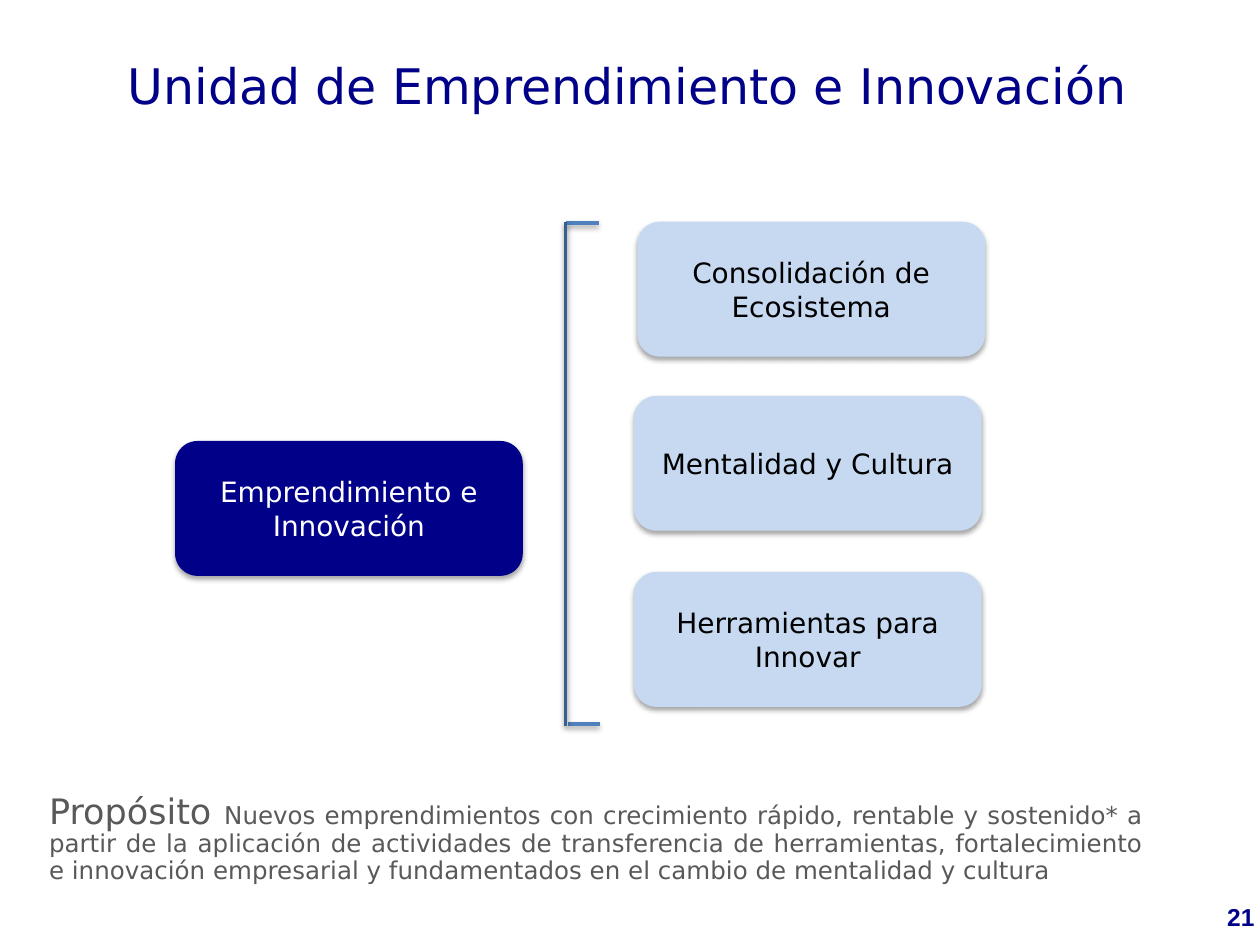
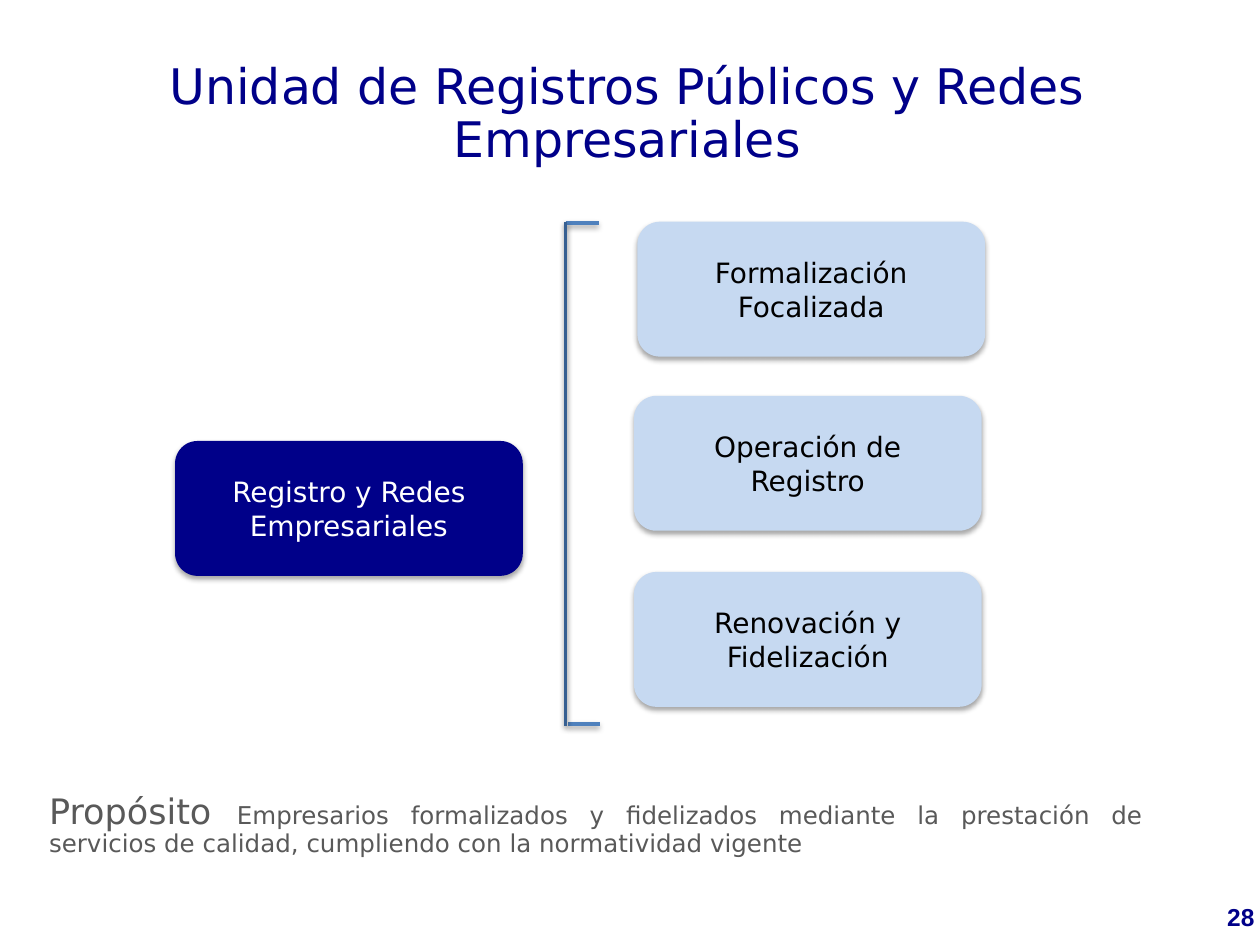
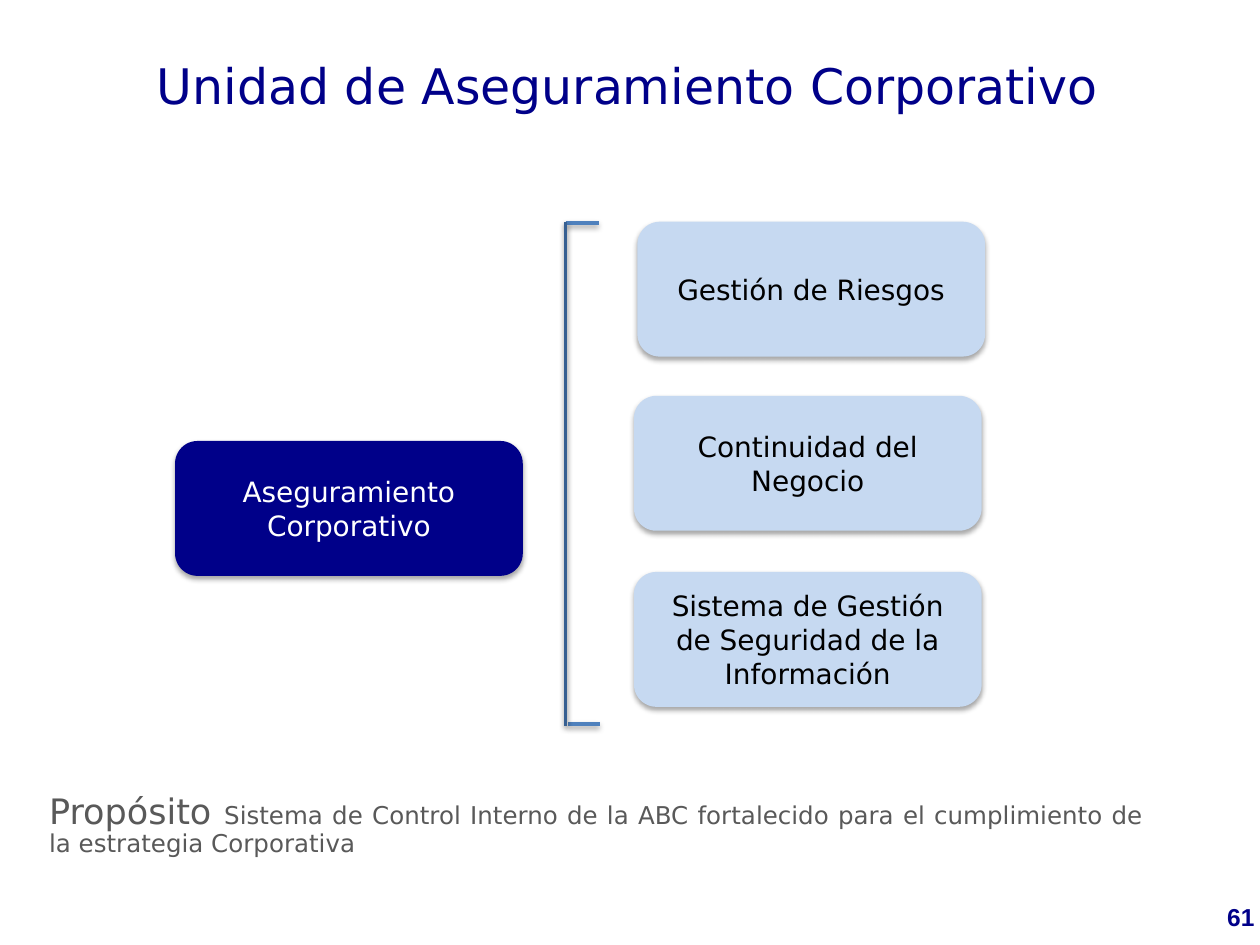
from dataclasses import dataclass
from typing import Optional

import lxml.etree
import pptx
import pptx.dml.color
import pptx.enum.shapes
import pptx.enum.text
import pptx.oxml.ns
import pptx.shapes.autoshape
import pptx.shapes.connector
import pptx.slide
import pptx.text.text
import pptx.util
from pptx.util import Cm

Align = pptx.enum.text.PP_ALIGN


@dataclass(frozen=True)
class Theme:
    navy: str = "000089"
    pale_blue: str = "C6D9F1"
    arm_blue: str = "4F81BD"
    spine_blue: str = "376092"
    gray: str = "595959"
    white: str = "FFFFFF"
    black: str = "000000"
    body_font: str = "DejaVu Sans"
    number_font: str = "Arial"
    title_size: int = 28
    label_size: int = 20
    box_size: int = 16
    text_size: int = 14
    line_width: int = 2
    tight_spacing: float = 0.9


THEME = Theme()


@dataclass(frozen=True)
class Area:
    left: float
    top: float
    width: float
    height: float

    def lengths(self) -> tuple[Cm, Cm, Cm, Cm]:
        return Cm(self.left), Cm(self.top), Cm(self.width), Cm(self.height)


@dataclass(frozen=True)
class Stroke:
    x1: float
    y1: float
    x2: float
    y2: float
    color: str


@dataclass(frozen=True)
class Shadow:
    distance: float
    opacity: int
    blur: float = 3.1


@dataclass(frozen=True)
class Unit:
    title: str
    name: str
    programs: tuple[str, str, str]
    purpose: str
    number: int
    title_lines: int = 1
    purpose_height: float = 2.11


# Layout, in centimetres
BOX_WIDTH, BOX_HEIGHT = 7.01, 2.72
UNIT_AREA = Area(3.53, 8.89, BOX_WIDTH, BOX_HEIGHT)
PROGRAM_AREAS = [
    Area(left, top, BOX_WIDTH, BOX_HEIGHT)
    for left, top in ((12.85, 4.47), (12.78, 7.98), (12.78, 11.53))
]
BRACKET = (
    Stroke(11.4, 4.5, 12.07, 4.5, THEME.arm_blue),
    Stroke(12.09, 14.6, 11.46, 14.6, THEME.arm_blue),
    Stroke(11.4, 4.47, 11.4, 14.63, THEME.spine_blue),
)
NUMBER_AREA = Area(24.23, 18.06, 1.57, 0.86)
BOX_SHADOW = Shadow(distance=1.8, opacity=35)
LINE_SHADOW = Shadow(distance=1.6, opacity=38)

UNITS = (
    Unit(
        "Unidad de Emprendimiento e Innovación",
        "Emprendimiento e Innovación",
        ("Consolidación de Ecosistema", "Mentalidad y Cultura", "Herramientas para Innovar"),
        "Nuevos emprendimientos con crecimiento rápido, rentable y sostenido* a partir de la "
        "aplicación de actividades de transferencia de herramientas, fortalecimiento e innovación "
        "empresarial y fundamentados en el cambio de mentalidad y cultura",
        21,
    ),
    Unit(
        "Unidad de Registros Públicos y Redes Empresariales",
        "Registro y Redes Empresariales",
        ("Formalización Focalizada", "Operación de Registro", "Renovación y Fidelización"),
        "Empresarios formalizados y fidelizados mediante la prestación de servicios de calidad, "
        "cumpliendo con la normatividad vigente",
        28,
        title_lines=2,
    ),
    Unit(
        "Unidad de Aseguramiento Corporativo",
        "Aseguramiento Corporativo",
        (
            "Gestión de Riesgos",
            "Continuidad del Negocio",
            "Sistema de Gestión de Seguridad de la Información",
        ),
        "Sistema de Control Interno de la ABC fortalecido para el cumplimiento de la "
        "estrategia Corporativa",
        61,
        purpose_height=1.57,
    ),
)


def rgb(color: str) -> pptx.dml.color.RGBColor:
    return pptx.dml.color.RGBColor.from_string(color)


def set_font(
    font: pptx.text.text.Font,
    size: int,
    color: str,
    name: str = THEME.body_font,
    bold: bool = False,
) -> None:
    font.name = name
    font.size = pptx.util.Pt(size)
    font.bold = bold
    font.color.rgb = rgb(color)


def add_shadow(
    shape: pptx.shapes.autoshape.Shape | pptx.shapes.connector.Connector, shadow: Shadow
) -> None:
    """Cast a soft black shadow straight down; fill and line must be set before."""
    qn = pptx.oxml.ns.qn
    effects = lxml.etree.SubElement(shape.element.spPr, qn("a:effectLst"))
    outer = lxml.etree.SubElement(
        effects,
        qn("a:outerShdw"),
        blurRad=str(pptx.util.Pt(shadow.blur)),
        dist=str(pptx.util.Pt(shadow.distance)),
        dir="5400000",
        rotWithShape="0",
    )
    color = lxml.etree.SubElement(outer, qn("a:srgbClr"), val=THEME.black)
    lxml.etree.SubElement(color, qn("a:alpha"), val=str(shadow.opacity * 1000))


def add_text(
    slide: pptx.slide.Slide,
    area: Area,
    text: str,
    alignment: Align,
    line_spacing: Optional[float] = None,
) -> pptx.text.text._Paragraph:
    frame = slide.shapes.add_textbox(*area.lengths()).text_frame
    frame.word_wrap = True
    frame.auto_size = pptx.enum.text.MSO_AUTO_SIZE.SHAPE_TO_FIT_TEXT
    paragraph = frame.paragraphs[0]
    paragraph.alignment = alignment
    paragraph.line_spacing = line_spacing
    paragraph.add_run().text = text
    return paragraph


def add_box(
    slide: pptx.slide.Slide, area: Area, text: str, fill: str, text_color: str
) -> None:
    shape = slide.shapes.add_shape(
        pptx.enum.shapes.MSO_SHAPE.ROUNDED_RECTANGLE, *area.lengths()
    )
    shape.fill.solid()
    shape.fill.fore_color.rgb = rgb(fill)
    shape.line.fill.background()
    add_shadow(shape, BOX_SHADOW)
    frame = shape.text_frame
    frame.word_wrap = True
    frame.vertical_anchor = pptx.enum.text.MSO_ANCHOR.MIDDLE
    paragraph = frame.paragraphs[0]
    paragraph.text = text
    paragraph.alignment = Align.CENTER
    set_font(paragraph.font, THEME.box_size, text_color)


def add_stroke(slide: pptx.slide.Slide, stroke: Stroke) -> None:
    connector = slide.shapes.add_connector(
        pptx.enum.shapes.MSO_CONNECTOR.STRAIGHT,
        Cm(stroke.x1), Cm(stroke.y1), Cm(stroke.x2), Cm(stroke.y2),
    )
    connector.line.color.rgb = rgb(stroke.color)
    connector.line.width = pptx.util.Pt(THEME.line_width)
    add_shadow(connector, LINE_SHADOW)


def add_unit_slide(presentation: pptx.presentation.Presentation, unit: Unit) -> None:
    slide = presentation.slides.add_slide(presentation.slide_layouts[6])

    # Page number
    number = add_text(slide, NUMBER_AREA, str(unit.number), Align.CENTER)
    set_font(number.font, THEME.text_size, THEME.navy, THEME.number_font, bold=True)

    # Unit, bracket and programs
    for stroke in BRACKET:
        add_stroke(slide, stroke)
    add_box(slide, UNIT_AREA, unit.name, THEME.navy, THEME.white)
    for area, program in zip(PROGRAM_AREAS, unit.programs):
        add_box(slide, area, program, THEME.pale_blue, THEME.black)

    # Purpose
    purpose_area = Area(0.74, 15.88, 22.56, unit.purpose_height)
    purpose = add_text(
        slide, purpose_area, "Propósito ", Align.JUSTIFY, THEME.tight_spacing
    )
    purpose.add_run().text = unit.purpose
    for run, size in zip(purpose.runs, (THEME.label_size, THEME.text_size)):
        set_font(run.font, size, THEME.gray)

    # Title
    title_area = Area(1.68, 1.12, 21.92, 0.28 + 1.07 * unit.title_lines)
    title = add_text(slide, title_area, unit.title, Align.CENTER, THEME.tight_spacing)
    set_font(title.font, THEME.title_size, THEME.navy)


def main() -> None:
    presentation = pptx.Presentation()
    presentation.slide_width = Cm(25.4)
    presentation.slide_height = Cm(19.05)
    for unit in UNITS:
        add_unit_slide(presentation, unit)
    presentation.save("out.pptx")


if __name__ == "__main__":
    main()
